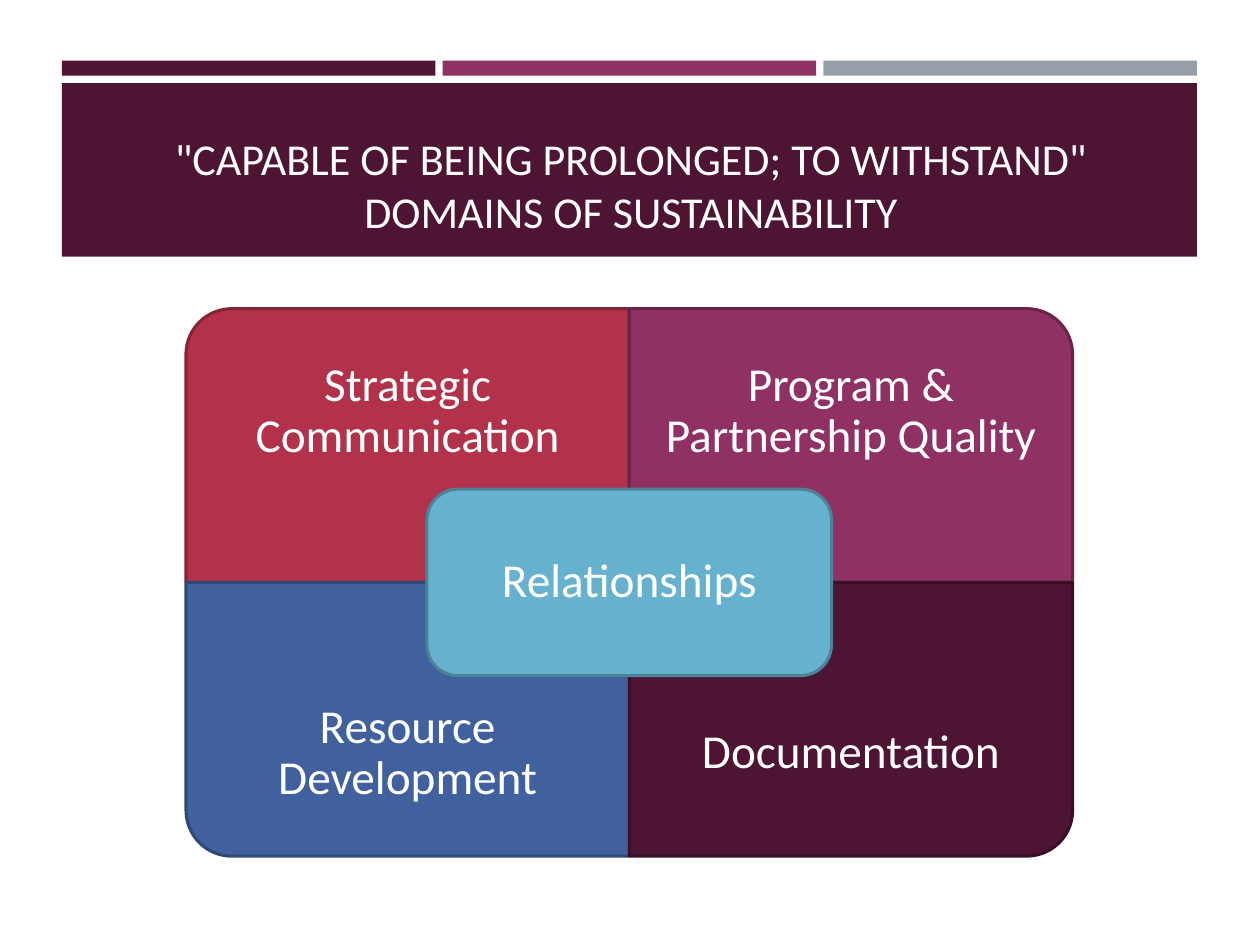
from pptx import Presentation
from pptx.dml.color import RGBColor
from pptx.enum import shapes, text
from pptx.util import Pt

# Content: quadrants run row by row as (label, fill, line, turn)
TITLE = '"CAPABLE OF BEING PROLONGED; TO WITHSTAND"\vDOMAINS OF SUSTAINABILITY'
QUADS = [
    ("Strategic Communication", "B2324B", "842537", 270),
    ("Program & Partnership Quality", "903163", "6B2449", 0),
    ("Resource Development", "40619D", "2F4874", 180),
    ("Documentation", "4D1434", "390F26", 90),
]
CORE = ("Relationships", "66B1CE", "4B8398")
BARS = ["4D1434", "903163", "969FA7"]

THEME = {"font": "Calibri", "ink": "FFFFFF", "band": "4D1434",
         "title": 25.2, "label": 27, "line": 1.75}

# Geometry in points
BAND = (35.3, 47.5, 648.6, 99.2)
BAR_TOP, BAR_H, BAR_GAP = 34.7, 8.6, 4.1
MID_X, MID_Y = 359.6, 332.8
CELL_W, CELL_H = 253.3, 156.4
CORE_W, CORE_H, CORE_PAD = 231.2, 106.6, 5.2

prs = Presentation()
prs.slide_width, prs.slide_height = Pt(720), Pt(540)
slide = prs.slides.add_slide(prs.slide_layouts[6])
KIND = shapes.MSO_SHAPE


def block(kind, box, fill, line=None, turn=0):
    item = slide.shapes.add_shape(kind, *map(Pt, box))
    item.shadow.inherit = False
    item.rotation = turn
    item.fill.solid()
    item.fill.fore_color.rgb = RGBColor.from_string(fill)
    if line:
        item.line.color.rgb = RGBColor.from_string(line)
        item.line.width = Pt(THEME["line"])
    else:
        item.line.fill.background()


def label(words, box, size, pad, anchor, space=None):
    frame = slide.shapes.add_textbox(*map(Pt, box)).text_frame
    frame.text = words
    form = {"word_wrap": True, "vertical_anchor": anchor,
            "margin_left": Pt(pad[0]), "margin_right": Pt(pad[0]),
            "margin_top": Pt(pad[1]), "margin_bottom": Pt(pad[1])}
    for name, value in form.items():
        setattr(frame, name, value)
    para = frame.paragraphs[0]
    para.alignment = text.PP_ALIGN.CENTER
    para.line_spacing = space
    for run in para.runs:
        for name, value in {"name": THEME["font"], "size": Pt(size)}.items():
            setattr(run.font, name, value)
        run.font.color.rgb = RGBColor.from_string(THEME["ink"])


# Header bars and band
left, top, wide, high = BAND
bar_w = (wide - BAR_GAP * (len(BARS) - 1)) / len(BARS)
for i, fill in enumerate(BARS):
    block(KIND.RECTANGLE, (left + i * (bar_w + BAR_GAP), BAR_TOP, bar_w, BAR_H), fill)
block(KIND.RECTANGLE, BAND, THEME["band"])
label(TITLE, (46, 54, 629.3, 85), THEME["title"], (7.2, 3.6),
      text.MSO_ANCHOR.BOTTOM)

# Quadrants: a quarter turn swaps width and height about the same centre
text_h = CELL_H * 0.75
for i, (words, fill, line, turn) in enumerate(QUADS):
    row, col = divmod(i, 2)
    x, y = MID_X + (col - 1) * CELL_W, MID_Y + (row - 1) * CELL_H
    w, h = (CELL_H, CELL_W) if turn % 180 else (CELL_W, CELL_H)
    box = (x + (CELL_W - w) / 2, y + (CELL_H - h) / 2, w, h)
    block(KIND.ROUND_1_RECTANGLE, box, fill, line, turn)
    label(words, (x, y + row * (CELL_H - text_h), CELL_W, text_h),
          THEME["label"], (15.1, 15.1), text.MSO_ANCHOR.MIDDLE, 0.9)

# Core on top of the quadrants
words, fill, line = CORE
x, y = MID_X - CORE_W / 2, MID_Y - CORE_H / 2
block(KIND.ROUNDED_RECTANGLE, (x, y, CORE_W, CORE_H), fill, line)
label(words, (x + CORE_PAD, y + CORE_PAD, CORE_W - 2 * CORE_PAD, CORE_H - 2 * CORE_PAD),
      THEME["label"], (7.9, 7.9), text.MSO_ANCHOR.MIDDLE, 0.9)

prs.save("out.pptx")
